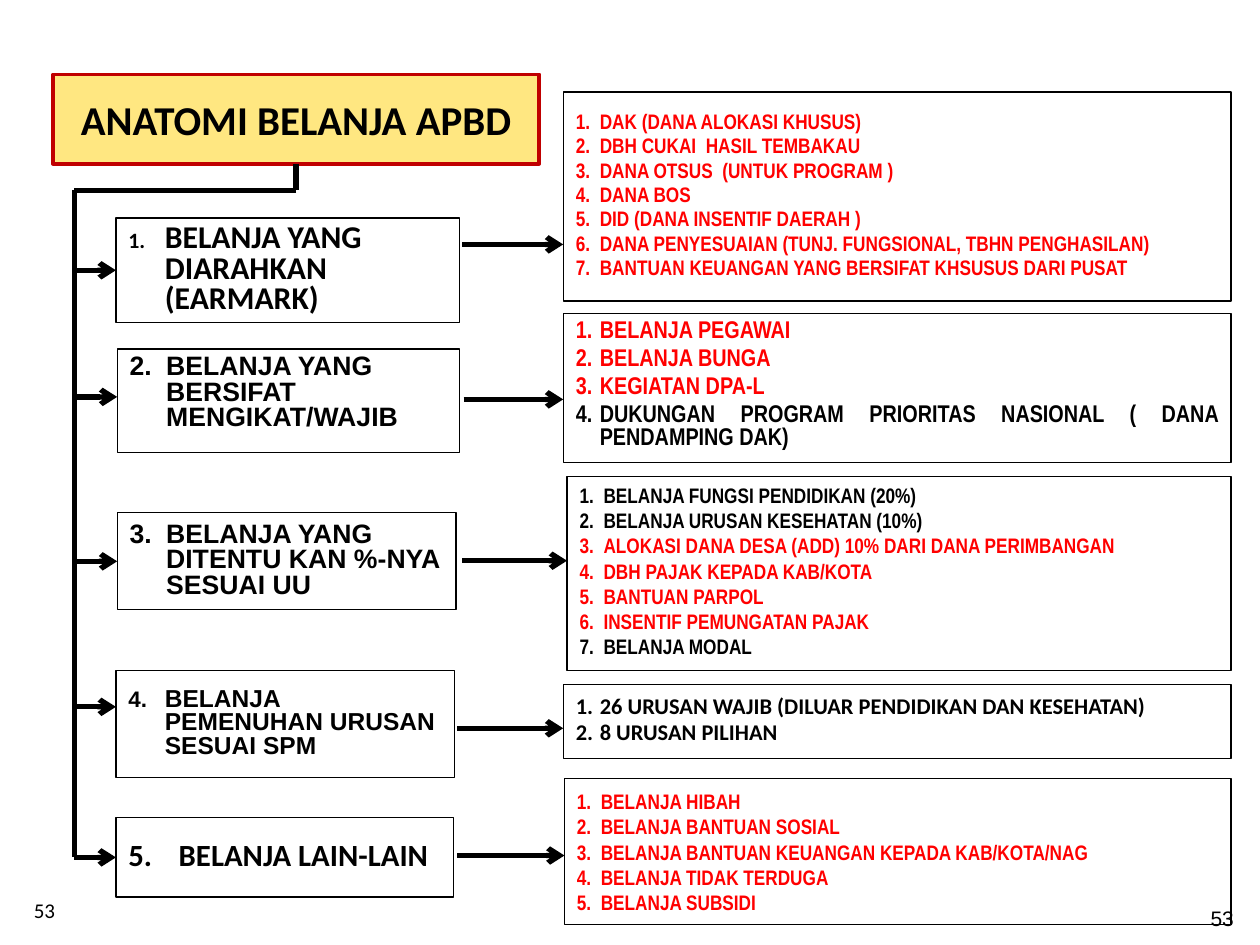
from dataclasses import dataclass
from typing import Iterator, Optional

from lxml.etree import SubElement
from pptx import Presentation
from pptx.dml.color import RGBColor
from pptx.enum.shapes import MSO_CONNECTOR as Link, MSO_SHAPE as Preset
from pptx.enum.text import MSO_ANCHOR as Anchor, MSO_AUTO_SIZE as Fit, PP_ALIGN as Align
from pptx.oxml.ns import qn
from pptx.util import Inches, Pt

CELL = 0.1
TRUNK, BEND, RIGHT_EDGE = 5.9, 15.1, 97.7
BLACK, RED, WHITE = "000000", "FF0000", "FFFFFF"


@dataclass
class Area:
    left: float
    top: float
    width: float
    height: float

    @property
    def middle(self) -> float:
        return self.top + self.height / 2


@dataclass
class Category:
    area: Area
    number: str
    text: str
    font: str
    size: float
    number_size: Optional[float] = None
    anchor: Anchor = Anchor.MIDDLE
    indent: float = 2.9


@dataclass
class Details:
    left: float
    top: float
    height: float
    groups: tuple
    font: str = "Arial Narrow"
    size: float = 12
    anchor: Anchor = Anchor.MIDDLE
    spacing: float = 0.8
    gap: float = 0.2


@dataclass
class Branch:
    category: Category
    details: Details
    arrow_start: float
    arrow_row: float
    branch_row: Optional[float] = None


BRANCHES = (
    Branch(
        Category(Area(9.2, 17.3, 27.3, 8.3), "1.", "BELANJA YANG DIARAHKAN (EARMARK)", "Calibri", 18.1, 12.5),
        Details(44.7, 7.3, 16.6, ((RED, (
            "DAK (DANA ALOKASI KHUSUS)", "DBH CUKAI  HASIL TEMBAKAU",
            "DANA OTSUS  (UNTUK PROGRAM )", "DANA BOS", "DID (DANA INSENTIF DAERAH )",
            "DANA PENYESUAIAN (TUNJ. FUNGSIONAL, TBHN PENGHASILAN)",
            "BANTUAN KEUANGAN YANG BERSIFAT KHSUSUS DARI PUSAT")),)),
        36.7, 19.4),
    Branch(
        Category(Area(9.3, 27.7, 27.2, 8.2), "2.", "BELANJA YANG BERSIFAT MENGIKAT/WAJIB", "Arial", 15.2,
                 anchor=Anchor.TOP),
        Details(44.7, 24.9, 11.8, (
            (RED, ("BELANJA PEGAWAI", "BELANJA BUNGA", "KEGIATAN DPA-L")),
            (BLACK, ("DUKUNGAN PROGRAM PRIORITAS NASIONAL ( DANA PENDAMPING DAK)",))),
            size=13.8, anchor=Anchor.TOP),
        36.8, 31.7, 31.5),
    Branch(
        Category(Area(9.3, 40.7, 26.9, 7.7), "3.", "BELANJA YANG DITENTU KAN %-NYA SESUAI UU", "Arial", 15.2),
        Details(45, 37.8, 15.4, (
            (BLACK, ("BELANJA FUNGSI PENDIDIKAN (20%)", "BELANJA URUSAN KESEHATAN (10%)")),
            (RED, ("ALOKASI DANA DESA (ADD) 10% DARI DANA PERIMBANGAN", "DBH PAJAK KEPADA KAB/KOTA",
                   "BANTUAN PARPOL", "INSENTIF PEMUNGATAN PAJAK")),
            (BLACK, ("BELANJA MODAL",))), anchor=Anchor.TOP, spacing=1, gap=0),
        36.7, 44.5),
    Branch(
        Category(Area(9.2, 53.2, 26.9, 8.5), "4.", "BELANJA PEMENUHAN URUSAN SESUAI SPM", "Arial", 14, 12.8),
        Details(44.7, 54.3, 5.9, ((BLACK, (
            "26 URUSAN WAJIB (DILUAR PENDIDIKAN DAN KESEHATAN)", "8 URUSAN PILIHAN")),),
            font="Calibri", size=12.8),
        36.3, 57.8, 56.1),
    Branch(
        Category(Area(9.2, 64.9, 26.8, 6.3), "5.", "BELANJA LAIN-LAIN", "Calibri", 17.6, indent=4),
        Details(44.8, 61.8, 11.6, ((RED, (
            "BELANJA HIBAH", "BELANJA BANTUAN SOSIAL", "BELANJA BANTUAN KEUANGAN KEPADA KAB/KOTA/NAG",
            "BELANJA TIDAK TERDUGA", "BELANJA SUBSIDI")),), spacing=1, gap=0),
        36.3, 67.9),
)


def cells(count: float) -> int:
    return Inches(count * CELL)


def color(value: str) -> RGBColor:
    return RGBColor.from_string(value)


def assign(target, values: dict) -> None:
    for name, value in values.items():
        setattr(target, name, value)


def place(shape, area: Area) -> None:
    assign(shape, {name: cells(getattr(area, name)) for name in ("left", "top", "width", "height")})


def style_box(box, area: Area, anchor: Anchor, fill: str = WHITE, line: str = BLACK, weight: float = 0.75) -> None:
    place(box, area)
    box.fill.solid()
    box.fill.fore_color.rgb = color(fill)
    box.line.color.rgb = color(line)
    box.line.width = Pt(weight)
    assign(box.text_frame, {"word_wrap": True, "auto_size": Fit.NONE, "vertical_anchor": anchor})


def add_box(slide):
    box = slide.shapes.add_shape(Preset.RECTANGLE, 0, 0, 0, 0)
    box.shadow.inherit = False
    return box


def add_span(para, text: str, font: str, size: float, tint: str = BLACK, bold: bool = True) -> None:
    span = para.add_run()
    span.text = text
    assign(span.font, {"name": font, "size": Pt(size), "bold": bold})
    span.font.color.rgb = color(tint)


def indent(para, depth: float) -> None:
    props = para._p.get_or_add_pPr()
    props.set("marL", str(cells(depth)))
    props.set("indent", str(-cells(depth)))


def draw_category(slide, category: Category):
    box = add_box(slide)
    style_box(box, category.area, category.anchor)
    para = box.text_frame.paragraphs[0]
    assign(para, {"alignment": Align.LEFT, "line_spacing": 0.8})
    indent(para, category.indent)
    add_span(para, category.number + "\t", category.font, category.number_size or category.size)
    add_span(para, category.text, category.font, category.size)
    return box


def draw_details(box, details: Details) -> None:
    area = Area(details.left, details.top, RIGHT_EDGE - details.left, details.height)
    style_box(box, area, details.anchor)
    frame = box.text_frame
    entries = [(text, tint) for tint, texts in details.groups for text in texts]
    for index, (text, tint) in enumerate(entries):
        para = frame.add_paragraph() if index else frame.paragraphs[0]
        before = Pt(details.size * details.gap) if index else Pt(0)
        assign(para, {"alignment": Align.JUSTIFY, "line_spacing": details.spacing, "space_before": before})
        indent(para, 1.9)
        SubElement(para._p.pPr, qn("a:buAutoNum"), type="arabicPeriod")
        add_span(para, text, details.font, details.size, tint)


def draw_line(slide, start: tuple, end: tuple, arrow: bool = False):
    points = (cells(value) for value in (*start, *end))
    line = slide.shapes.add_connector(Link.STRAIGHT, *points)
    line.line.color.rgb = color(BLACK)
    line.line.width = Pt(3)
    if arrow:
        SubElement(line.line._get_or_add_ln(), qn("a:tailEnd"), type="arrow")
    SubElement(line._element.spPr, qn("a:effectLst"))
    return line


def draw_branch(slide, branch: Branch, holders: Iterator) -> None:
    box = draw_category(slide, branch.category)
    draw_details(next(holders, None) or add_box(slide), branch.details)
    area = branch.category.area
    row = branch.branch_row or area.middle
    stub = draw_line(slide, (TRUNK, row), (area.left, row), arrow=True)
    if branch.branch_row is None:
        stub.end_connect(box, 1)
    draw_line(slide, (branch.arrow_start, branch.arrow_row), (branch.details.left, branch.arrow_row), arrow=True)


def draw_number(slide, area: Area, font: str, align: Align, anchor: Anchor) -> None:
    box = slide.shapes.add_textbox(0, 0, 0, 0)
    place(box, area)
    assign(box.text_frame, {"word_wrap": True, "vertical_anchor": anchor})
    para = box.text_frame.paragraphs[0]
    para.alignment = align
    add_span(para, "53", font, 12, bold=False)


def main() -> None:
    deck = Presentation()
    assign(deck, {"slide_width": cells(100), "slide_height": cells(75)})
    slide = deck.slides.add_slide(deck.slide_layouts[4])
    title, *bodies = slide.placeholders
    style_box(title, Area(4.2, 5.9, 38.6, 7.1), Anchor.MIDDLE, "FFE781", "C00000", 2)
    heading = title.text_frame.paragraphs[0]
    heading.alignment = Align.CENTER
    add_span(heading, "ANATOMI BELANJA APBD", "Calibri", 23.4)

    holders = iter(bodies)
    for branch in BRANCHES:
        draw_branch(slide, branch, holders)

    drop = draw_line(slide, (23.5, 13), (23.5, BEND))
    drop.begin_connect(title, 2)
    draw_line(slide, (23.5, BEND), (TRUNK, BEND))
    draw_line(slide, (TRUNK, BEND), (TRUNK, BRANCHES[-1].category.area.middle))

    draw_number(slide, Area(92.4, 71.4, 9.2, 2.9), "Arial", Align.CENTER, Anchor.TOP)
    draw_number(slide, Area(1.7, 70.2, 23.3, 4), "Calibri", Align.LEFT, Anchor.MIDDLE)
    deck.save("out.pptx")


if __name__ == "__main__":
    main()
